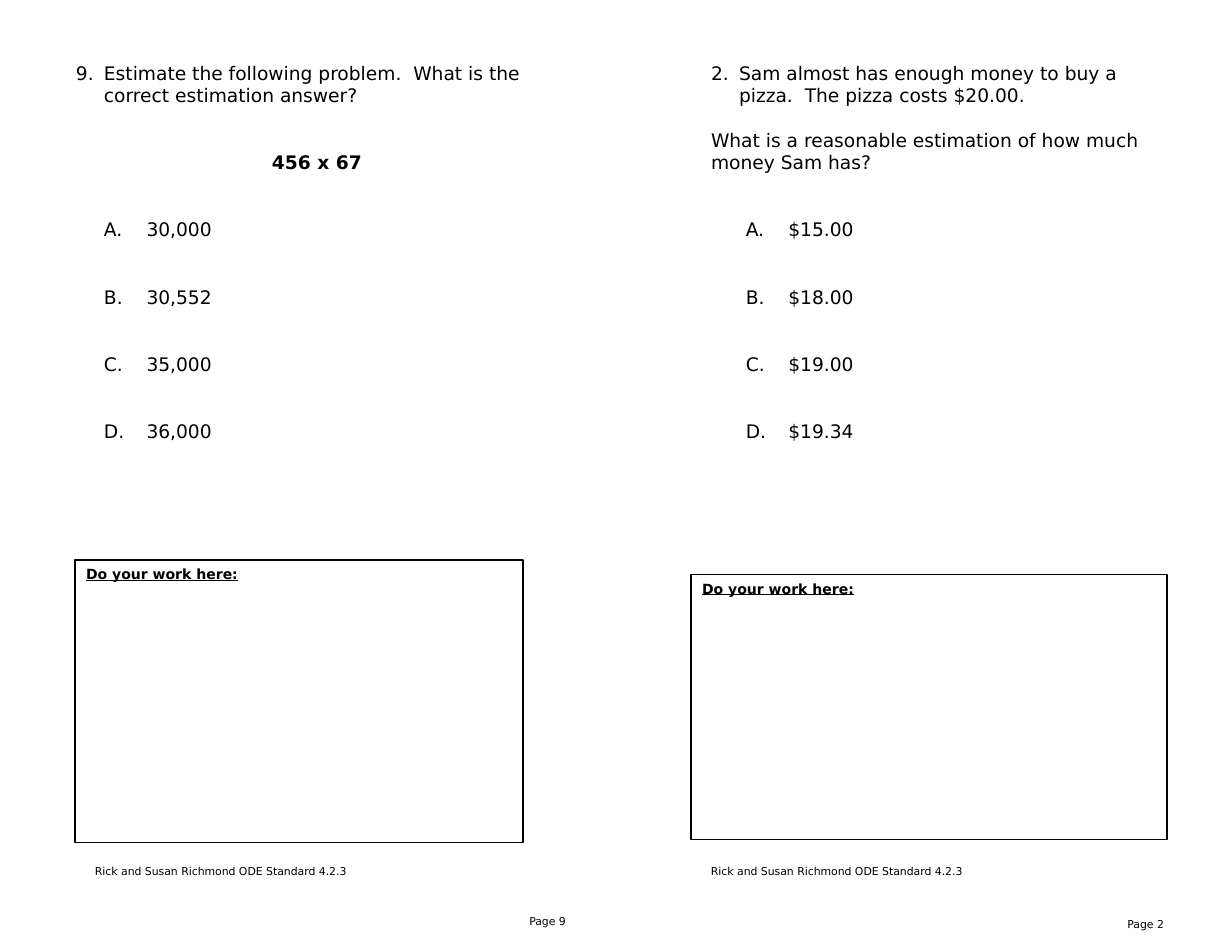
from lxml.etree import SubElement
from pptx import Presentation
from pptx.dml.color import RGBColor
from pptx.enum.shapes import MSO_SHAPE as Shape
from pptx.enum.text import MSO_ANCHOR as Anchor, PP_ALIGN as Align
from pptx.oxml.ns import qn
from pptx.util import Inches, Pt

BLACK = RGBColor(0, 0, 0)
FONT = "DejaVu Sans"
LINE_HEIGHT = 14.4
CREDIT = "Rick and Susan Richmond ODE Standard 4.2.3"


def write(frame, text, size=12, bold=False, underline=False, align=Align.LEFT,
          blank_lines=0, margin=0, hanging=0, numbering=None, start=1):
    """Write one paragraph, using the frame's first one while it is empty."""
    paragraph = frame.paragraphs[0] if not frame.text else frame.add_paragraph()
    paragraph.alignment = align
    paragraph.space_before = Pt(blank_lines * LINE_HEIGHT)
    properties = paragraph._p.get_or_add_pPr()
    properties.set("marL", str(Inches(margin)))
    properties.set("indent", str(-Inches(hanging)))
    if numbering:
        SubElement(properties, qn("a:buFont"), typeface=FONT)
        SubElement(properties, qn("a:buAutoNum"), type=numbering, startAt=str(start))
    run = paragraph.add_run()
    run.text = text
    font = run.font
    font.name, font.size, font.bold, font.underline = FONT, Pt(size), bold, underline
    font.color.rgb = BLACK


def add_text_frame(slide, box):
    """Add a wrapping text box and return its frame."""
    frame = slide.shapes.add_textbox(*map(Inches, box)).text_frame
    frame.word_wrap = True
    return frame


def add_question(slide, box, number, question, options, option_margin,
                 prompt, prompt_format):
    """Add a numbered question, its prompt and the lettered options."""
    frame = add_text_frame(slide, box)
    write(frame, question, margin=0.25, hanging=0.25,
          numbering="arabicPeriod", start=number)
    write(frame, prompt, **prompt_format)
    for option in options:
        write(frame, option, blank_lines=2, margin=option_margin, hanging=0.38,
              numbering="alphaUcPeriod")


def add_work_area(slide, box):
    """Add the outlined box for the pupil's work."""
    shape = slide.shapes.add_shape(Shape.RECTANGLE, *map(Inches, box))
    shape.shadow.inherit = False
    shape.fill.background()
    shape.line.color.rgb = BLACK
    shape.line.width = Pt(0.75)
    frame = shape.text_frame
    frame.word_wrap = True
    frame.vertical_anchor = Anchor.TOP
    write(frame, "Do your work here:", size=9, bold=True, underline=True)


def add_footer(slide, credit_box, page_box, page):
    """Add the credit line and the page number."""
    write(add_text_frame(slide, credit_box), CREDIT, size=7)
    write(add_text_frame(slide, page_box), f"Page {page}", size=7, align=Align.RIGHT)


def main():
    """Build the two-page sheet."""
    presentation = Presentation()
    presentation.slide_width, presentation.slide_height = Inches(11), Inches(8.5)
    slide = presentation.slides.add_slide(presentation.slide_layouts[6])

    add_question(
        slide, (0.58, 0.5, 4.75, 3.53), 9,
        "Estimate the following problem.  What is the correct estimation answer?",
        ("30,000", "30,552", "35,000", "36,000"), 0.63,
        "456 x 67", {"bold": True, "blank_lines": 2, "margin": 1.75})
    add_work_area(slide, (0.67, 5, 4, 2.52))
    add_footer(slide, (0.75, 7.67, 2.67, 0.22), (4.33, 8.12, 0.82, 0.3), 9)

    add_question(
        slide, (6.25, 0.5, 4.08, 3.53), 2,
        "Sam almost has enough money to buy a pizza.  The pizza costs $20.00.",
        ("$15.00", "$18.00", "$19.00", "$19.34"), 0.69,
        "What is a reasonable estimation of how much money Sam has?",
        {"blank_lines": 1})
    add_work_area(slide, (6.17, 5.13, 4.25, 2.37))
    add_footer(slide, (6.25, 7.67, 2.67, 0.22), (9.67, 8.14, 0.82, 0.3), 2)

    presentation.save("out.pptx")


if __name__ == "__main__":
    main()
